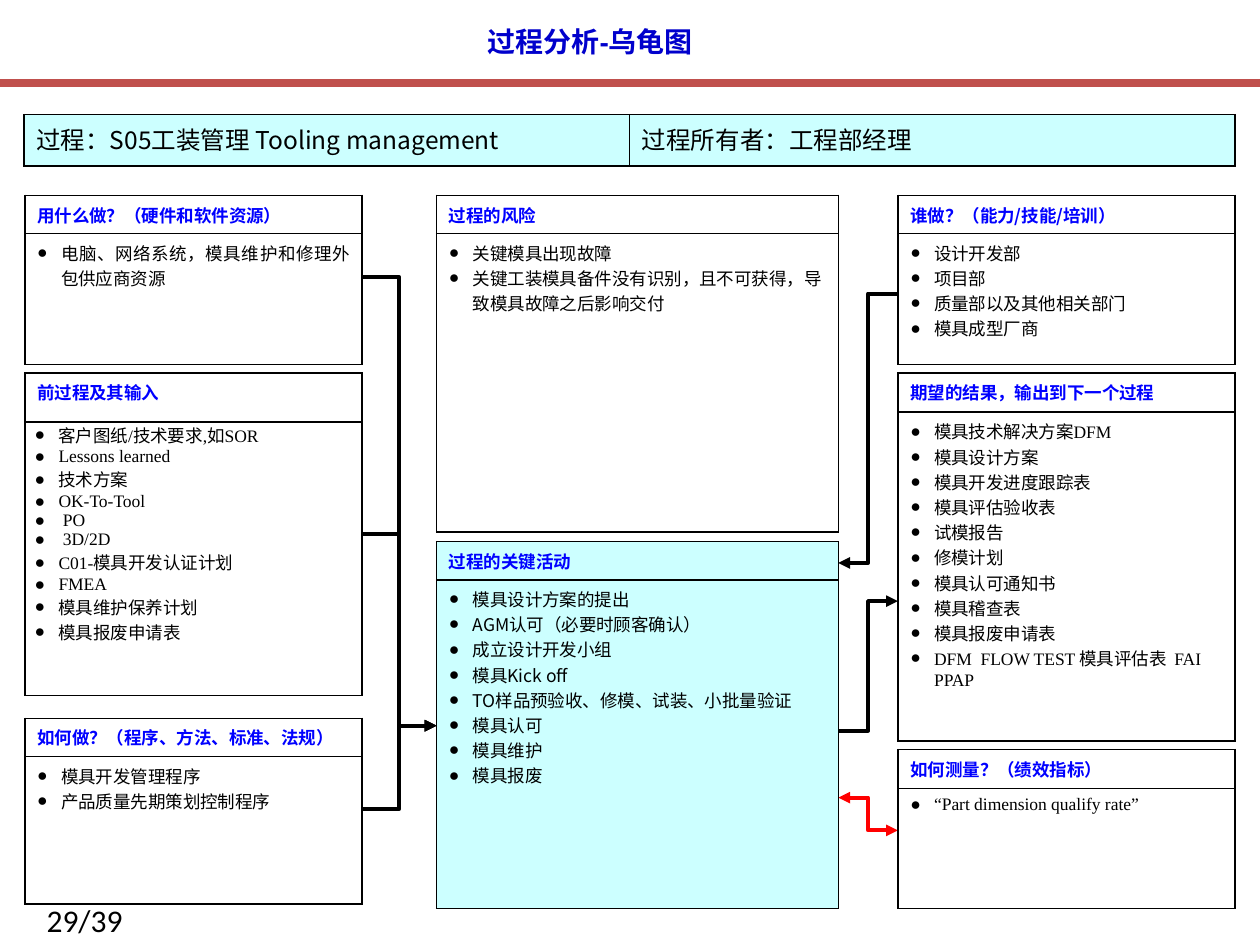
from lxml import etree
from pptx import Presentation
from pptx.dml.color import RGBColor
from pptx.enum.shapes import MSO_CONNECTOR as CONN
from pptx.enum.text import MSO_ANCHOR, MSO_AUTO_SIZE, PP_ALIGN
from pptx.oxml.ns import qn
from pptx.util import Cm, Pt

COLORS = {"title": "0000CC", "heading": "0000FF", "text": "000000", "line": "000000",
          "rule": "C0504D", "feedback": "FF0000", "panel": "CCFFFF"}
SANS, SERIF = "Noto Sans CJK SC", "Times New Roman"

# Columns of the diagram: left edge and width in cm
LEFT, MIDDLE, RIGHT = (0.5, 6.8), (8.8, 8.1), (18.1, 6.8)

# Column, top, row heights, heading, items, options
BOXES = [
    (LEFT, 3.94, (0.69, 2.64), "用什么做？（硬件和软件资源）",
     ["电脑、网络系统，模具维护和修理外包供应商资源"], {"font": SERIF, "justify": True}),
    (RIGHT, 3.94, (0.69, 2.64), "谁做？（能力/技能/培训）",
     ["设计开发部", "项目部", "质量部以及其他相关部门", "模具成型厂商"], {}),
    (LEFT, 7.52, (0.99, 5.51), "前过程及其输入",
     ["客户图纸/技术要求,如SOR", "Lessons learned", "技术方案", "OK-To-Tool", " PO",
      " 3D/2D", "C01-模具开发认证计划", "FMEA", "模具维护保养计划", "模具报废申请表"],
     {"font": SERIF, "justify": True, "insets": (0.2, 0)}),
    (RIGHT, 7.52, (0.79, 6.63), "期望的结果，输出到下一个过程",
     ["模具技术解决方案DFM", "模具设计方案", "模具开发进度跟踪表", "模具评估验收表",
      "试模报告", "修模计划", "模具认可通知书", "模具稽查表", "模具报废申请表",
      "DFM  FLOW TEST 模具评估表  FAI PPAP"], {"font": SERIF}),
    (LEFT, 14.48, (0.69, 2.97), "如何做？（程序、方法、标准、法规）",
     ["模具开发管理程序", "产品质量先期策划控制程序"], {"font": SERIF, "justify": True}),
    (RIGHT, 15.11, (0.79, 2.41), "如何测量？（绩效指标）",
     ["“Part dimension qualify rate”"], {"font": SERIF, "justify": True}),
    (MIDDLE, 3.94, (0.69, 6.02), "过程的风险",
     ["关键模具出现故障", "关键工装模具备件没有识别，且不可获得，导致模具故障之后影响交付"], {}),
    (MIDDLE, 10.92, (0.76, 6.63), "过程的关键活动",
     ["模具设计方案的提出", "AGM认可（必要时顾客确认）", "成立设计开发小组", "模具Kick off",
      "TO样品预验收、修模、试装、小批量验证", "模具认可", "模具维护", "模具报废"],
     {"fill": "panel"}),
]


def rgb(name):
    return RGBColor.from_string(COLORS[name])


def format_runs(p, size, font, color, bold=False):
    for r in p.runs:
        r.font.size, r.font.name, r.font.bold = Pt(size), font, bold
        r.font.color.rgb = rgb(color)
        latin = r.font._element.find(qn("a:latin"))
        ea = etree.Element(qn("a:ea"), typeface=SANS)
        latin.addnext(ea)


def add_bullet(p):
    pPr = p._p.get_or_add_pPr()
    pPr.set("marL", str(Cm(0.48)))
    pPr.set("indent", str(-Cm(0.48)))
    etree.SubElement(pPr, qn("a:buFont"), typeface=SERIF)
    etree.SubElement(pPr, qn("a:buChar"), char="●")


def style_cell(cell, fill, insets=(0.25, 0.13)):
    cell.margin_left = cell.margin_right = Cm(insets[0])
    cell.margin_top = cell.margin_bottom = Cm(insets[1])
    if fill:
        cell.fill.solid()
        cell.fill.fore_color.rgb = rgb(fill)
    else:
        cell.fill.background()
    # Borders stand before the fill
    tcPr = cell._tc.get_or_add_tcPr()
    for i, side in enumerate(("lnL", "lnR", "lnT", "lnB")):
        ln = etree.Element(qn("a:" + side), w=str(Pt(1)))
        solid = etree.SubElement(ln, qn("a:solidFill"))
        etree.SubElement(solid, qn("a:srgbClr"), val=COLORS["line"])
        tcPr.insert(i, ln)


def add_table(slide, left, top, widths, heights):
    table = slide.shapes.add_table(len(heights), len(widths), Cm(left), Cm(top),
                                   Cm(sum(widths)), Cm(sum(heights))).table
    table.first_row = table.horz_banding = False
    for column, width in zip(table.columns, widths):
        column.width = Cm(width)
    for row, height in zip(table.rows, heights):
        row.height = Cm(height)
    return table


def add_banner(slide, texts):
    table = add_table(slide, 0.48, 2.31, (12.21, 12.21), (1.04,))
    for cell, text in zip(table.rows[0].cells, texts):
        style_cell(cell, "panel")
        cell.text_frame.text = text
        format_runs(cell.text_frame.paragraphs[0], 14, SANS, "text")


def add_box(slide, column, top, heights, heading, items,
            font=SANS, justify=False, insets=(0.25, 0.13), fill=None):
    left, width = column
    table = add_table(slide, left, top, (width,), heights)
    head, body = table.cell(0, 0), table.cell(1, 0)
    style_cell(head, fill)
    head.text_frame.text = heading
    format_runs(head.text_frame.paragraphs[0], 10, SANS, "heading", True)
    style_cell(body, fill, insets)
    body.text_frame.text = "\n".join(items)
    for p in body.text_frame.paragraphs:
        p.alignment = PP_ALIGN.JUSTIFY if justify else PP_ALIGN.LEFT
        add_bullet(p)
        format_runs(p, 10, font, "text")


def add_line(slide, kind, start, end, color="line", width=2.25, arrows=()):
    """Arrows holds headEnd and/or tailEnd, in that order."""
    line = slide.shapes.add_connector(kind, *map(Cm, start + end))
    line.line.color.rgb = rgb(color)
    line.line.width = Pt(width)
    ln = line.line._get_or_add_ln()
    for arrow in arrows:
        etree.SubElement(ln, qn("a:" + arrow), type="triangle")
    etree.SubElement(line._element.spPr, qn("a:effectLst"))


def add_title(slide, text):
    sp = slide.shapes.title
    sp.left, sp.top, sp.width, sp.height = Cm(5.3), Cm(0.33), Cm(13.2), Cm(1)
    tf = sp.text_frame
    tf.text = text
    tf.word_wrap, tf.auto_size = False, MSO_AUTO_SIZE.NONE
    tf.vertical_anchor = MSO_ANCHOR.MIDDLE
    p = tf.paragraphs[0]
    p.alignment = PP_ALIGN.CENTER
    format_runs(p, 16, "Arial", "title", True)


def add_page_number(slide, text):
    tf = slide.shapes.add_textbox(Cm(0.69), Cm(18.03), Cm(2.4), Cm(1.02)).text_frame
    tf.word_wrap = True
    tf.text = text
    format_runs(tf.paragraphs[0], 18, "Calibri", "text")


def main():
    prs = Presentation()
    prs.slide_width, prs.slide_height = Cm(25.4), Cm(19.05)
    slide = prs.slides.add_slide(prs.slide_layouts[5])

    # Heading area
    add_line(slide, CONN.STRAIGHT, (0, 1.68), (25.4, 1.68), "rule", 4.5)
    add_title(slide, "过程分析-乌龟图")
    add_banner(slide, ["过程：S05工装管理 Tooling management", "过程所有者：工程部经理"])

    # Left boxes feed the key activities
    for y in (16.31, 10.77, 5.59):
        add_line(slide, CONN.ELBOW, (7.3, y), (8.8, 14.63), arrows=("tailEnd",))

    # Key activities and the right boxes
    for y1, y2, color, arrows in (
            (14.73, 12.12, "line", ("tailEnd",)),
            (16.08, 16.74, "feedback", ("headEnd", "tailEnd")),
            (11.35, 5.92, "line", ("headEnd",))):
        add_line(slide, CONN.ELBOW, (16.9, y1), (18.1, y2), color, arrows=arrows)

    # Boxes of the turtle diagram
    for *box, options in BOXES:
        add_box(slide, *box, **options)

    add_page_number(slide, "29/39")
    prs.save("out.pptx")


if __name__ == "__main__":
    main()
